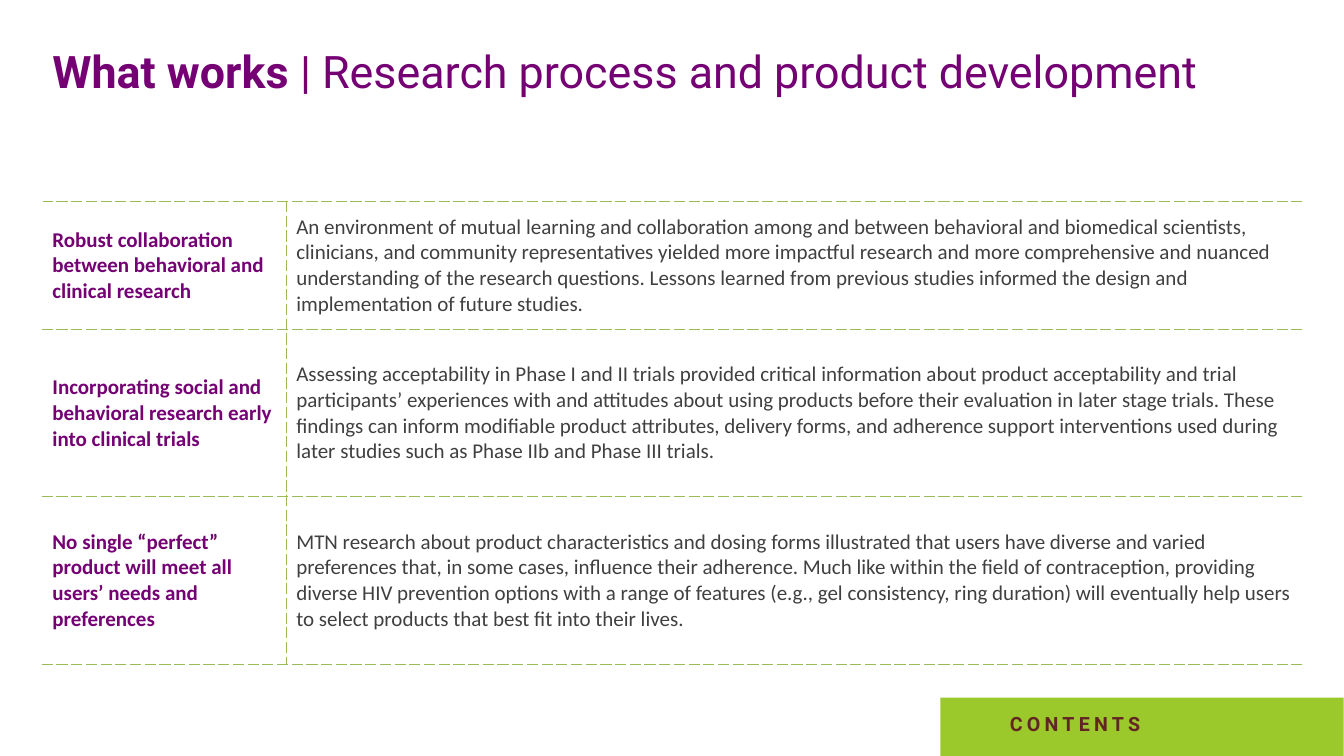
import pptx
import pptx.dml.color
import pptx.enum.shapes
import pptx.enum.text
import pptx.oxml
import pptx.oxml.ns
import pptx.util
from pptx.util import Inches

PURPLE, GREY, WHITE = "740074", "404040", "FFFFFF"
RULE, GREEN, BROWN = "9BBB59", "9BC82A", "632523"

ROWS = [
    ("Robust collaboration between behavioral and clinical research",
     "An environment of mutual learning and collaboration among and between behavioral and biomedical "
     "scientists, clinicians, and community representatives yielded more impactful research and more "
     "comprehensive and nuanced understanding of the research questions. Lessons learned from previous "
     "studies informed the design and implementation of future studies."),
    ("Incorporating social and behavioral research early into clinical trials",
     "Assessing acceptability in Phase I and II trials provided critical information about product "
     "acceptability and trial participants’ experiences with and attitudes about using products before "
     "their evaluation in later stage trials. These findings can inform modifiable product attributes, "
     "delivery forms, and adherence support interventions used during later studies such as Phase IIb "
     "and Phase III trials."),
    ("No single “perfect” product will meet all users’ needs and preferences",
     "MTN research about product characteristics and dosing forms illustrated that users have diverse "
     "and varied preferences that, in some cases, influence their adherence. Much like within the field "
     "of contraception, providing diverse HIV prevention options with a range of features (e.g., gel "
     "consistency, ring duration) will eventually help users to select products that best fit into "
     "their lives."),
]


def rgb(value):
    return pptx.dml.color.RGBColor.from_string(value)


class SlideBuilder:
    """Hold the text style and current slide, and add each kind of element."""

    def __init__(self, prs):
        self.s = prs.slides.add_slide(prs.slide_layouts[5])
        self.heading = {"name": "Roboto", "size": pptx.util.Pt(32)}
        self.cell = {"name": "Calibri", "size": pptx.util.Pt(15)}
        self.label = {"name": "Roboto", "size": pptx.util.Pt(14)}

    def run(self, p, text, style, color, bold):
        r = p.add_run()
        r.text = text
        for key, value in {**style, "bold": bold}.items():
            setattr(r.font, key, value)
        r.font.color.rgb = rgb(color)
        return r

    def title(self, box, strong, rest):
        sp = self.s.shapes.title
        for key, value in zip(("left", "top", "width", "height"), box):
            setattr(sp, key, Inches(value))
        tf = sp.text_frame
        tf.auto_size = pptx.enum.text.MSO_AUTO_SIZE.NONE
        tf.vertical_anchor = pptx.enum.text.MSO_ANCHOR.MIDDLE
        p = tf.paragraphs[0]
        p.alignment = pptx.enum.text.PP_ALIGN.LEFT
        self.run(p, strong, self.heading, PURPLE, True)
        self.run(p, rest, self.heading, PURPLE, False)

    def borders(self, cell, outer):
        tcPr = cell._tc.get_or_add_tcPr()
        for i, side in enumerate(("lnL", "lnR", "lnT", "lnB")):
            color, dash = (WHITE, "solid") if side == outer else (RULE, "sysDash")
            tcPr.insert(i, pptx.oxml.parse_xml(
                f'<a:{side} {pptx.oxml.ns.nsdecls("a")} w="12700"><a:solidFill>'
                f'<a:srgbClr val="{color}"/></a:solidFill><a:prstDash val="{dash}"/></a:{side}>'))

    def table(self, box, widths, heights, rows):
        table = self.s.shapes.add_table(len(rows), len(widths), *map(Inches, box)).table
        table.first_row = table.horz_banding = False
        for column, width in zip(table.columns, widths):
            column.width = Inches(width)
        for row, height, texts in zip(table.rows, heights, rows):
            row.height = Inches(height)
            formats = ((PURPLE, True, "lnL"), (GREY, False, "lnR"))
            for cell, text, (color, bold, outer) in zip(row.cells, texts, formats):
                cell.fill.background()
                cell.vertical_anchor = pptx.enum.text.MSO_ANCHOR.MIDDLE
                self.run(cell.text_frame.paragraphs[0], text, self.cell, color, bold)
                self.borders(cell, outer)

    def rect(self, box, color):
        sp = self.s.shapes.add_shape(pptx.enum.shapes.MSO_SHAPE.RECTANGLE, *map(Inches, box))
        sp.shadow.inherit = False
        sp.fill.solid()
        sp.fill.fore_color.rgb = rgb(color)
        sp.line.fill.background()

    def text(self, box, text, color, spacing):
        tf = self.s.shapes.add_textbox(*map(Inches, box)).text_frame
        tf.word_wrap = True
        tf.auto_size = pptx.enum.text.MSO_AUTO_SIZE.SHAPE_TO_FIT_TEXT
        r = self.run(tf.paragraphs[0], text, self.label, color, True)
        r._r.get_or_add_rPr().set("spc", str(spacing * 100))


def main():
    prs = pptx.Presentation()
    prs.slide_width, prs.slide_height = Inches(40 / 3), Inches(7.5)
    slide = SlideBuilder(prs)
    slide.title((0.42, 0.17, 13.17, 1.06), "What works ", "| Research process and product development")
    slide.table((0.42, 2, 12.5, 4.59), (2.42, 10.08), (1.27, 1.66, 1.66), ROWS)
    slide.rect((9.33, 6.92, 4, 3.35), GREEN)
    slide.text((9.92, 7.01, 2.75, 0.34), "CONTENTS", BROWN, 3)
    prs.save("out.pptx")


if __name__ == "__main__":
    main()
